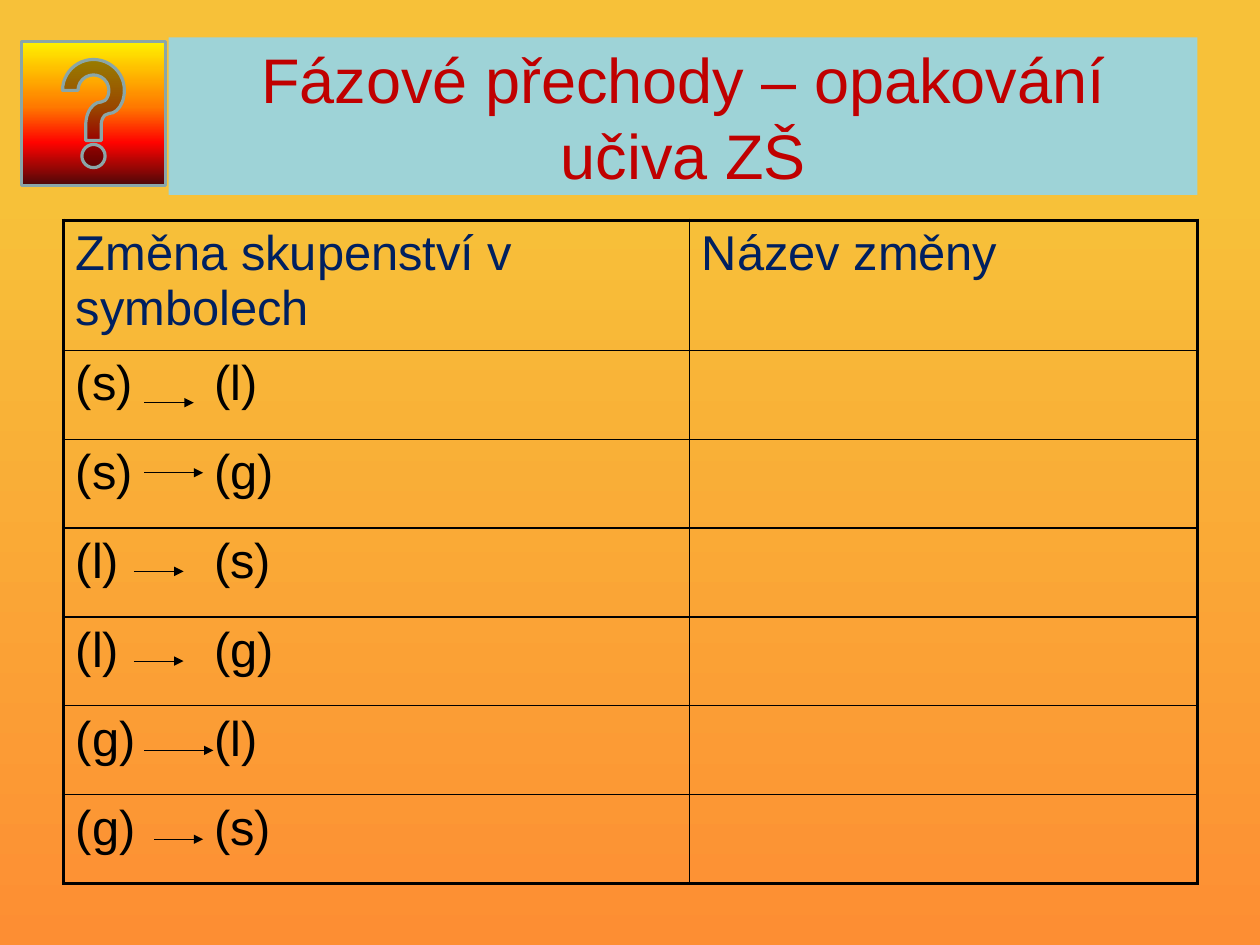
"""Build a quiz slide on phase transitions with a table of state changes."""
from copy import deepcopy

from lxml.etree import SubElement
from pptx import Presentation
from pptx.dml.color import RGBColor
from pptx.enum.shapes import MSO_CONNECTOR as Connector, MSO_SHAPE as Shape
from pptx.enum.text import MSO_ANCHOR as Anchor, PP_ALIGN as Align
from pptx.oxml.ns import qn
from pptx.util import Cm, Pt

BLACK, NAVY, RED, AQUA, GREY = "000000", "002060", "C00000", "9ED3D7", "8AA6A8"
HEADINGS = ("Změna skupenství v symbolech", "Název změny")
TRANSITIONS = [
    ("(s)", "(l)", 3.23, 4.34, 9.02),
    ("(s)", "(g)", 3.23, 4.55, 10.59),
    ("(l)", "(s)", 3.00, 4.11, 12.80),
    ("(l)", "(g)", 3.00, 4.11, 14.81),
    ("(g)", "(l)", 3.23, 4.78, 16.81),
    ("(g)", "(s)", 3.45, 4.55, 18.80),
]


def color(hex_value):
    """Turn a hex string into a colour."""
    return RGBColor.from_string(hex_value)


class QuizSlide:
    """Hold the slide and its style, and draw each kind of element."""

    font = "Arial"
    outer, inner = 2.25, 1

    def __init__(self, deck):
        """Add a blank slide to the deck."""
        self.slide = deck.slides.add_slide(deck.slide_layouts[6])
        self.shapes = self.slide.shapes

    def gradient(self, fill, element, stops):
        """Fill from top to bottom through (position, colour) stops."""
        fill.gradient()
        fill.gradient_angle = 270
        stop_list = element.find(".//" + qn("a:gsLst"))
        for _ in stops[2:]:
            stop_list.append(deepcopy(stop_list[0]))
        for stop, (position, hex_value) in zip(fill.gradient_stops, stops):
            stop.position = position
            stop.color.rgb = color(hex_value)

    def background(self, stops):
        """Paint the slide background."""
        self.gradient(self.slide.background.fill, self.slide.element, stops)

    def set_text(self, paragraph, text, size, hex_value):
        """Put styled text in a paragraph."""
        paragraph.text = text
        paragraph.font.name = self.font
        paragraph.font.size = Pt(size)
        paragraph.font.color.rgb = color(hex_value)

    def title(self, text, left, top, width, height):
        """Draw the title on its coloured band."""
        band = self.shapes.add_shape(Shape.RECTANGLE, Cm(left), Cm(top), Cm(width), Cm(height))
        band.shadow.inherit = False
        band.fill.solid()
        band.fill.fore_color.rgb = color(AQUA)
        band.line.fill.background()
        band.text_frame.word_wrap = True
        band.text_frame.vertical_anchor = Anchor.MIDDLE
        heading = band.text_frame.paragraphs[0]
        heading.alignment = Align.CENTER
        self.set_text(heading, text, 40, RED)

    def help_button(self, left, top, side, stops):
        """Draw the question mark button."""
        button = self.shapes.add_shape(
            Shape.ACTION_BUTTON_HELP, Cm(left), Cm(top), Cm(side), Cm(side))
        button.shadow.inherit = False
        self.gradient(button.fill, button.element, stops)
        button.line.color.rgb = color(GREY)
        button.line.width = Pt(2)

    def arrow(self, start, end, y):
        """Draw a horizontal arrow."""
        arrow = self.shapes.add_connector(Connector.STRAIGHT, Cm(start), Cm(y), Cm(end), Cm(y))
        arrow.line.color.rgb = color(BLACK)
        arrow.line.width = Pt(0.75)
        properties = arrow.element.spPr
        SubElement(properties.find(qn("a:ln")), qn("a:tailEnd"), type="triangle")
        SubElement(properties, qn("a:effectLst"))

    def borders(self, cell, edges):
        """Frame a cell, heavier on the sides that lie on the table's edge."""
        properties = cell._tc.get_or_add_tcPr()
        for index, (side, is_outer) in enumerate(zip("LRTB", edges)):
            width = Pt(self.outer if is_outer else self.inner)
            border = SubElement(properties, qn(f"a:ln{side}"), w=str(int(width)))
            SubElement(SubElement(border, qn("a:solidFill")), qn("a:srgbClr"), val=BLACK)
            properties.insert(index, border)

    def table(self, rows, left, top, widths, heights, tab):
        """Draw the table, with a tab stop that lines up the final states."""
        grid = self.shapes.add_table(len(rows), len(widths), Cm(left), Cm(top),
                                     Cm(sum(widths)), Cm(sum(heights))).table
        grid.first_row = grid.horz_banding = False
        for column, width in zip(grid.columns, widths):
            column.width = Cm(width)
        for r, (texts, height) in enumerate(zip(rows, heights)):
            grid.rows[r].height = Cm(height)
            for c, text in enumerate(texts):
                cell = grid.cell(r, c)
                cell.fill.background()
                cell.margin_left = cell.margin_right = Cm(0.28)
                cell.margin_top = cell.margin_bottom = Cm(0.14)
                self.borders(cell, (c == 0, c == len(widths) - 1, r == 0, r == len(rows) - 1))
                paragraph = cell.text_frame.paragraphs[0]
                self.set_text(paragraph, text, 31, BLACK if r else NAVY)
                if "\t" in text:
                    properties = paragraph._p.get_or_add_pPr()
                    tab_list = properties.makeelement(qn("a:tabLst"))
                    SubElement(tab_list, qn("a:tab"), pos=str(int(Cm(tab))), algn="l")
                    properties.insert(0, tab_list)


def main():
    """Build and save the deck."""
    deck = Presentation()
    deck.slide_width, deck.slide_height = Cm(28.22), Cm(21.17)
    quiz = QuizSlide(deck)
    quiz.background([(0.2, "F7C139"), (1, "FD8E33")])
    quiz.title("Fázové přechody – opakování učiva ZŠ", 3.78, 0.84, 23.04, 3.53)
    rows = [HEADINGS] + [(f"{before}\t{after}", "") for before, after, *_ in TRANSITIONS]
    quiz.table(rows, 1.42, 4.93, (14.02, 11.38), [2.92] + [1.99] * len(TRANSITIONS), 3.1)
    for _, _, start, end, y in TRANSITIONS:
        quiz.arrow(start, end, y)
    quiz.help_button(0.48, 0.93, 3.23,
                     [(0, "FFF200"), (0.45, "FF7A00"), (0.7, "FF0300"), (1, "4D0808")])
    deck.save("out.pptx")


if __name__ == "__main__":
    main()
